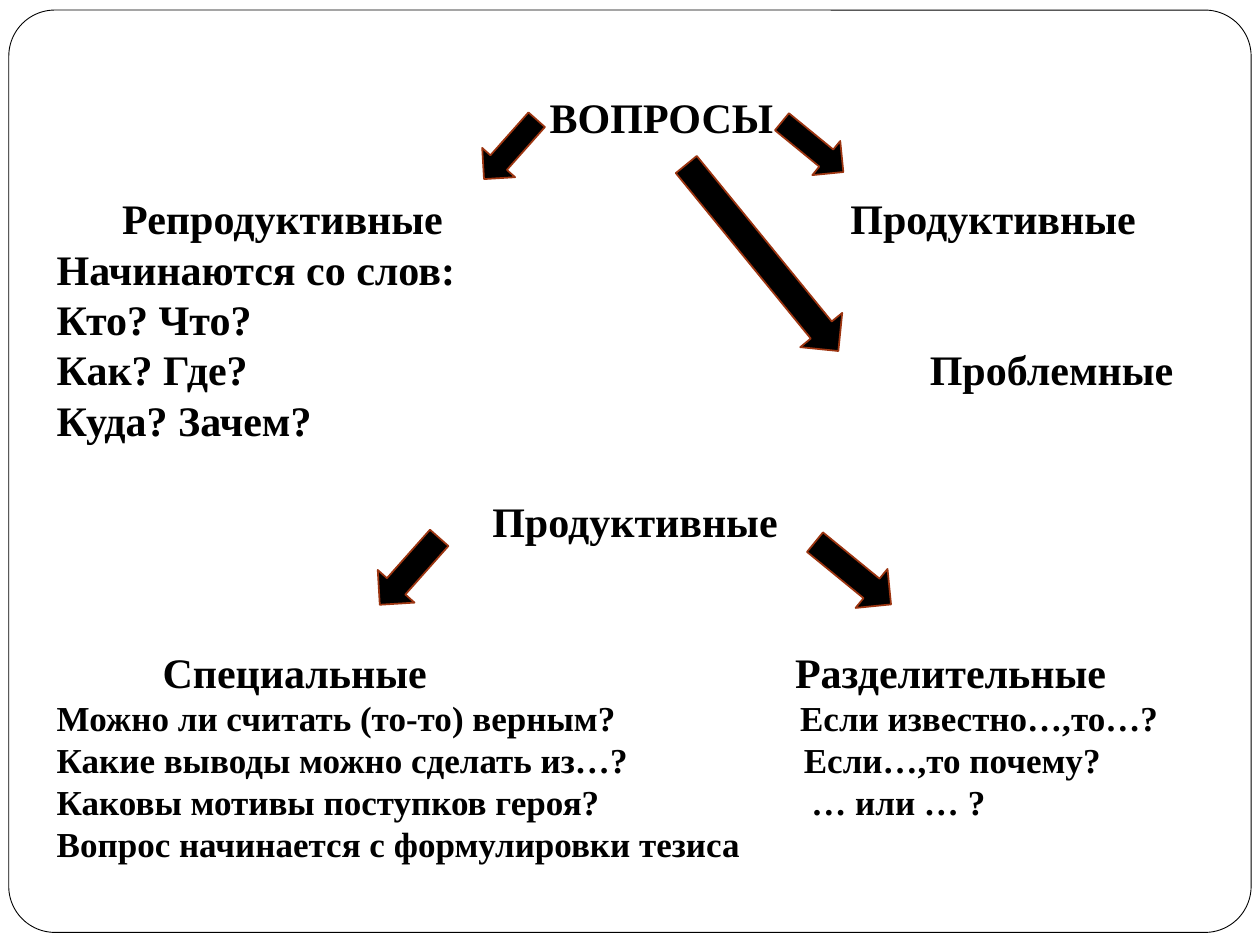
from dataclasses import dataclass

from lxml.etree import SubElement
from pptx import Presentation
from pptx.dml.color import RGBColor
from pptx.enum.shapes import MSO_SHAPE
from pptx.enum.text import MSO_ANCHOR, MSO_AUTO_SIZE, PP_ALIGN
from pptx.oxml.ns import qn
from pptx.util import Inches, Pt


@dataclass(frozen=True)
class Theme:
    """Colours, font and type sizes of the slide."""
    ink: RGBColor = RGBColor(0, 0, 0)
    paper: RGBColor = RGBColor(255, 255, 255)
    arrow_edge: RGBColor = RGBColor(0x9C, 0x35, 0x11)
    font: str = "Times New Roman"
    heading: int = 24
    detail: int = 20
    leading: float = 1.2


@dataclass(frozen=True)
class Box:
    """A region of the grid, measured in inches."""
    left: float
    top: float
    width: float
    height: float

    def cell(self, column, row, columns, rows):
        """Return a smaller box placed by columns and rows."""
        return Box(self.left + column * COLUMN, self.top + row * ROW,
                   columns * COLUMN, rows * ROW)

    def place(self, shape):
        """Give a shape the place and size of this box."""
        shape.left, shape.top = Inches(self.left), Inches(self.top)
        shape.width, shape.height = Inches(self.width), Inches(self.height)


THEME = Theme()
COLUMN, ROW = 0.1, 0.4
PAGE = Box(0, 0, 10, 7.5)
CONTENT = Box(0.45, 0.73, 9.2, 6.2)


def write_paragraph(paragraph, text, size=THEME.heading, align=PP_ALIGN.LEFT, indent=0):
    """Fill one paragraph and format it without a bullet."""
    paragraph.alignment = align
    paragraph.line_spacing = Pt(size * THEME.leading)
    paragraph.space_before = paragraph.space_after = Pt(0)
    properties = paragraph._p.get_or_add_pPr()
    properties.set("marL", str(Inches(indent * COLUMN)))
    properties.set("indent", "0")
    SubElement(properties, qn("a:buNone"))
    run = paragraph.add_run()
    run.text = text
    run.font.name, run.font.size, run.font.bold = THEME.font, Pt(size), True
    run.font.color.rgb = THEME.ink


def write_text(shape, box, lines, **formats):
    """Place a text shape; each line is a text or a text with its own format."""
    box.place(shape)
    frame = shape.text_frame
    frame.word_wrap = True
    frame.auto_size = MSO_AUTO_SIZE.NONE
    frame.vertical_anchor = MSO_ANCHOR.TOP
    frame.margin_left = frame.margin_top = frame.margin_right = frame.margin_bottom = 0
    for number, line in enumerate(lines):
        text, own = line if isinstance(line, tuple) else (line, {})
        paragraph = frame.add_paragraph() if number else frame.paragraphs[0]
        write_paragraph(paragraph, text, **{**formats, **own})


def add_label(slide, box, text):
    """Add a single heading in a text box."""
    write_text(slide.shapes.add_textbox(0, 0, 0, 0), box, [text])


def add_arrow(slide, box, column, row, length, thickness, angle):
    """Add a block arrow centred on a grid point and turned to an angle."""
    middle = box.cell(column, row, 0, 0)
    arrow = slide.shapes.add_shape(MSO_SHAPE.RIGHT_ARROW, 0, 0, 0, 0)
    Box(middle.left - length / 2, middle.top - thickness / 2, length, thickness).place(arrow)
    arrow.rotation = angle
    arrow.shadow.inherit = False
    arrow.fill.solid()
    arrow.fill.fore_color.rgb = THEME.ink
    arrow.line.color.rgb = THEME.arrow_edge
    arrow.line.width = Pt(1)


def add_frame(slide, box):
    """Draw the rounded page border behind everything else."""
    border = slide.shapes.add_shape(MSO_SHAPE.ROUNDED_RECTANGLE, 0, 0, 0, 0)
    Box(box.left + 0.07, box.top + 0.08, box.width - 0.14, box.height - 0.18).place(border)
    border.adjustments[0] = 0.05
    border.shadow.inherit = False
    border.fill.solid()
    border.fill.fore_color.rgb = THEME.paper
    border.line.color.rgb = THEME.ink
    border.line.width = Pt(0.5)
    slide.shapes._spTree.insert(2, border._element)


def add_question_types(slide, box, title, body):
    """Build the upper tree: all questions and their three kinds."""
    write_text(title, box.cell(33, 0, 30, 1), ["ВОПРОСЫ"], align=PP_ALIGN.CENTER)
    write_text(body, box.cell(0, 2, 45, 5), [
        ("Репродуктивные", {"indent": 5.2}),
        "Начинаются со слов:", "Кто? Что?", "Как? Где?", "Куда? Зачем?"])
    add_label(slide, box.cell(63, 2, 28, 1), "Продуктивные")
    add_label(slide, box.cell(69.3, 5, 22, 1), "Проблемные")
    add_arrow(slide, box, 36, 1.14, 0.63, 0.35, 131.6)
    add_arrow(slide, box, 60, 1.09, 0.63, 0.35, 39.3)
    add_arrow(slide, box, 56, 3.29, 1.91, 0.43, 50.8)


def add_productive_types(slide, box, heading, special, dividing):
    """Build the lower tree: productive questions and their two kinds."""
    headline = {"size": THEME.heading}
    write_text(heading, box.cell(30.9, 0, 30, 1), ["Продуктивные"], align=PP_ALIGN.CENTER)
    write_text(special, box.cell(0, 3, 57, 4.5), [
        ("Специальные", {**headline, "indent": 8.4}),
        "Можно ли считать (то-то) верным?", "Какие выводы можно сделать из…?",
        "Каковы мотивы поступков героя?", "Вопрос начинается с формулировки тезиса",
    ], size=THEME.detail)
    write_text(dividing, box.cell(58.6, 3, 33, 4.5), [
        ("Разделительные", headline),
        ("Если известно…,то…?", {"indent": 0.4}),
        ("Если…,то почему?", {"indent": 0.7}),
        ("… или … ?", {"indent": 1.3}),
    ], size=THEME.detail)
    add_arrow(slide, box, 28, 1.51, 0.71, 0.39, 131.6)
    add_arrow(slide, box, 63.2, 1.55, 0.78, 0.4, 39.3)


def main():
    """Create the one-slide presentation."""
    presentation = Presentation()
    presentation.slide_width = Inches(PAGE.width)
    presentation.slide_height = Inches(PAGE.height)
    slide = presentation.slides.add_slide(presentation.slide_layouts[4])
    title, reproductive, productive, special, dividing = slide.placeholders
    add_frame(slide, PAGE)
    add_question_types(slide, CONTENT.cell(0, 0, 92, 7), title, reproductive)
    add_productive_types(slide, CONTENT.cell(0, 8, 92, 7.5), productive, special, dividing)
    presentation.save("out.pptx")


if __name__ == "__main__":
    main()
